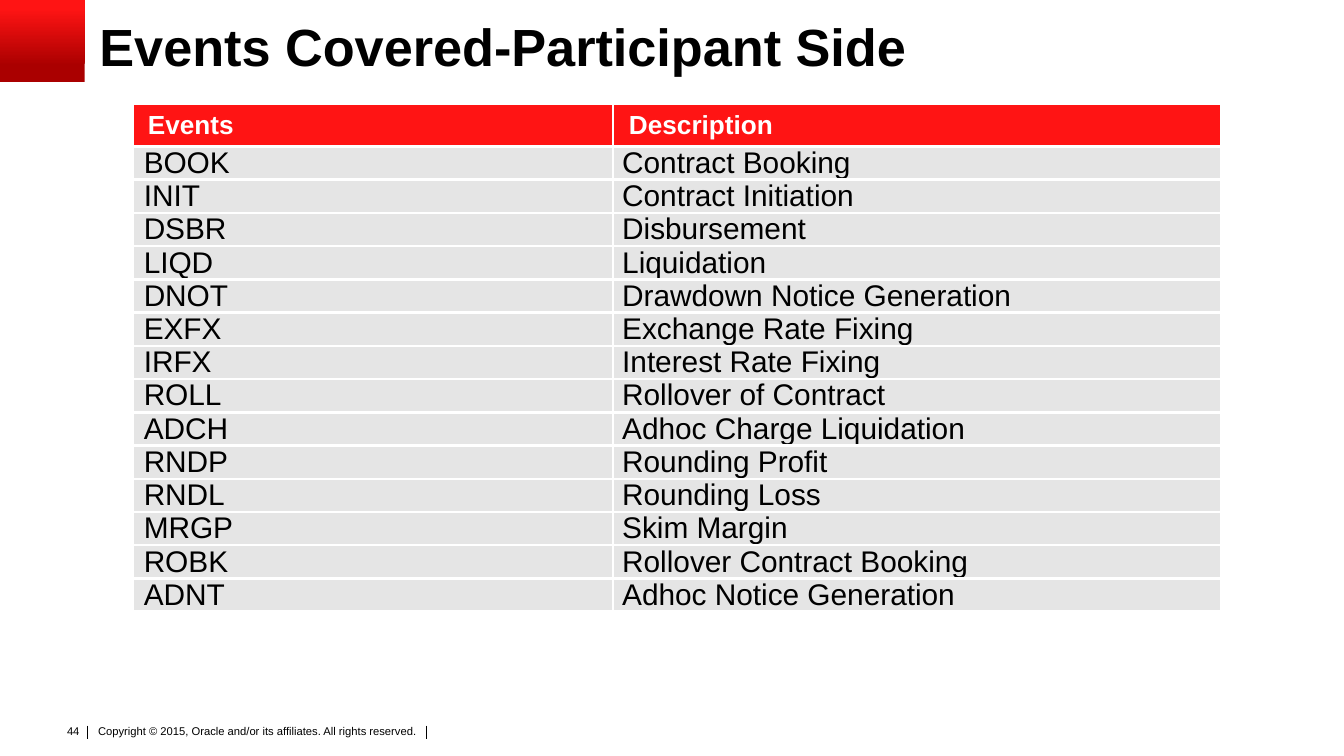
"""Build the slide listing participant-side contract events."""
from lxml.etree import SubElement
from pptx import Presentation
from pptx.dml.color import RGBColor
from pptx.enum.shapes import MSO_CONNECTOR as Link, MSO_SHAPE as Shape
from pptx.enum.text import MSO_ANCHOR as Anchor, PP_ALIGN as Align
from pptx.oxml import parse_xml
from pptx.oxml.ns import nsdecls, qn
from pptx.util import Inches, Pt

BLACK = RGBColor(0, 0, 0)
WHITE = RGBColor(255, 255, 255)
RED = RGBColor(0xFF, 0x14, 0x14)
DARK = RGBColor(0xAA, 0, 0)
GRAY = RGBColor(0xE5, 0xE5, 0xE5)

TITLE = "Events Covered-Participant Side"
HEAD = ("Events", "Description")
EVENTS = [
    ("BOOK", "Contract Booking"),
    ("INIT", "Contract Initiation"),
    ("DSBR", "Disbursement"),
    ("LIQD", "Liquidation"),
    ("DNOT", "Drawdown Notice Generation"),
    ("EXFX", "Exchange Rate Fixing"),
    ("IRFX", "Interest Rate Fixing"),
    ("ROLL", "Rollover of Contract"),
    ("ADCH", "Adhoc Charge Liquidation"),
    ("RNDP", "Rounding Profit"),
    ("RNDL", "Rounding Loss"),
    ("MRGP", "Skim Margin"),
    ("ROBK", "Rollover Contract Booking"),
    ("ADNT", "Adhoc Notice Generation"),
]
NOTE = "Copyright © 2015, Oracle and/or its affiliates. All rights reserved."
PAGE = "44"

WIDE = 10
HIGH = WIDE * 9 / 16
COLS = (3.56, 4.52)
TOP_ROW, ROW = 0.31, 0.24
BARS = (0.65, 3.17)


def write(frame, text, size, color=BLACK, bold=False, align=Align.LEFT, space=None):
    """Put one formatted paragraph into a text frame."""
    para = frame.paragraphs[0]
    para.alignment = align
    if space:
        para.line_spacing = space
    run = para.add_run()
    run.text = text
    font = run.font
    font.name, font.size, font.bold = "Arial", Pt(size), bold
    font.color.rgb = color


def inset(item, x, y):
    """Set equal side margins and equal top and bottom margins."""
    item.margin_left = item.margin_right = Inches(x)
    item.margin_top = item.margin_bottom = Inches(y)


def label(slide, text, box, pad, wrap=True, align=Align.LEFT):
    """Add a small footer text box."""
    frame = slide.shapes.add_textbox(*map(Inches, box)).text_frame
    frame.word_wrap = wrap
    inset(frame, *pad)
    write(frame, text, 6, align=align)


def edge(cell, sides):
    """Draw white borders on the named sides of a cell and clear the rest."""
    props = cell._tc.get_or_add_tcPr()
    solid = f'<a:solidFill><a:srgbClr val="{WHITE}"/></a:solidFill>'
    for i, side in enumerate("LRTB"):
        fill = solid if side in sides else "<a:noFill/>"
        props.insert(i, parse_xml(
            f'<a:ln{side} {nsdecls("a")} w="{Pt(1.5)}">{fill}</a:ln{side}>'))


def add_title(slide):
    """Place the title and the corner block beside it."""
    block = slide.shapes.add_shape(Shape.RECTANGLE, 0, 0, Inches(0.63), Inches(0.61))
    block.shadow.inherit = False
    block.line.fill.background()
    block.fill.gradient()
    block.fill.gradient_angle = 90
    for stop, (place, color) in zip(block.fill.gradient_stops, ((0.2, DARK), (0.9, RED))):
        stop.position, stop.color.rgb = place, color
    title = slide.shapes.title
    title.left, title.top, title.width, title.height = map(Inches, (0.74, 0.15, 9, 0.44))
    frame = title.text_frame
    frame.vertical_anchor = Anchor.MIDDLE
    inset(frame, 0, 0)
    write(frame, TITLE, 28, bold=True, space=0.9)


def add_events(slide):
    """Fill the table of events."""
    rows = [HEAD] + EVENTS
    high = TOP_ROW + ROW * len(EVENTS)
    box = map(Inches, (1, 0.78, sum(COLS), high))
    table = slide.shapes.add_table(len(rows), len(COLS), *box).table
    table.horz_banding = False
    for col, wide in zip(table.columns, COLS):
        col.width = Inches(wide)
    for r, row in enumerate(rows):
        head = r == 0
        table.rows[r].height = Inches(TOP_ROW if head else ROW)
        for c, text in enumerate(row):
            cell = table.cell(r, c)
            cell.fill.solid()
            cell.fill.fore_color.rgb = RED if head else GRAY
            edge(cell, "RL"[c] + ("B" if head else "TB"))
            if head:
                inset(cell, 0.1, 0.04)
                cell.margin_left = Inches(0.1 + 0.02 * c)
                cell.vertical_anchor = Anchor.MIDDLE
                write(cell.text_frame, text, 14, WHITE, True)
            else:
                inset(cell, 0.07, 0)
                cell.vertical_anchor = Anchor.BOTTOM
                write(cell.text_frame, text, 16)


def add_footer(slide):
    """Add the page number, the copyright line and its bars."""
    label(slide, NOTE, (0.69, 5.37, 2.74, 0.24), (0.04, 0.02))
    label(slide, PAGE, (0.39, 5.34, 0.3, 0.2), (0.1, 0.05), False, Align.RIGHT)
    for x in BARS:
        ends = map(Inches, (x, 5.4, x, 5.5))
        bar = slide.shapes.add_connector(Link.STRAIGHT, *ends)
        bar.line.color.rgb = BLACK
        bar.line.width = Pt(0.5)
        SubElement(bar._element.spPr, qn("a:effectLst"))


def main():
    """Build and save the deck."""
    deck = Presentation()
    deck.slide_width, deck.slide_height = Inches(WIDE), Inches(HIGH)
    slide = deck.slides.add_slide(deck.slide_layouts[5])
    add_title(slide)
    add_events(slide)
    add_footer(slide)
    deck.save("out.pptx")


if __name__ == "__main__":
    main()
